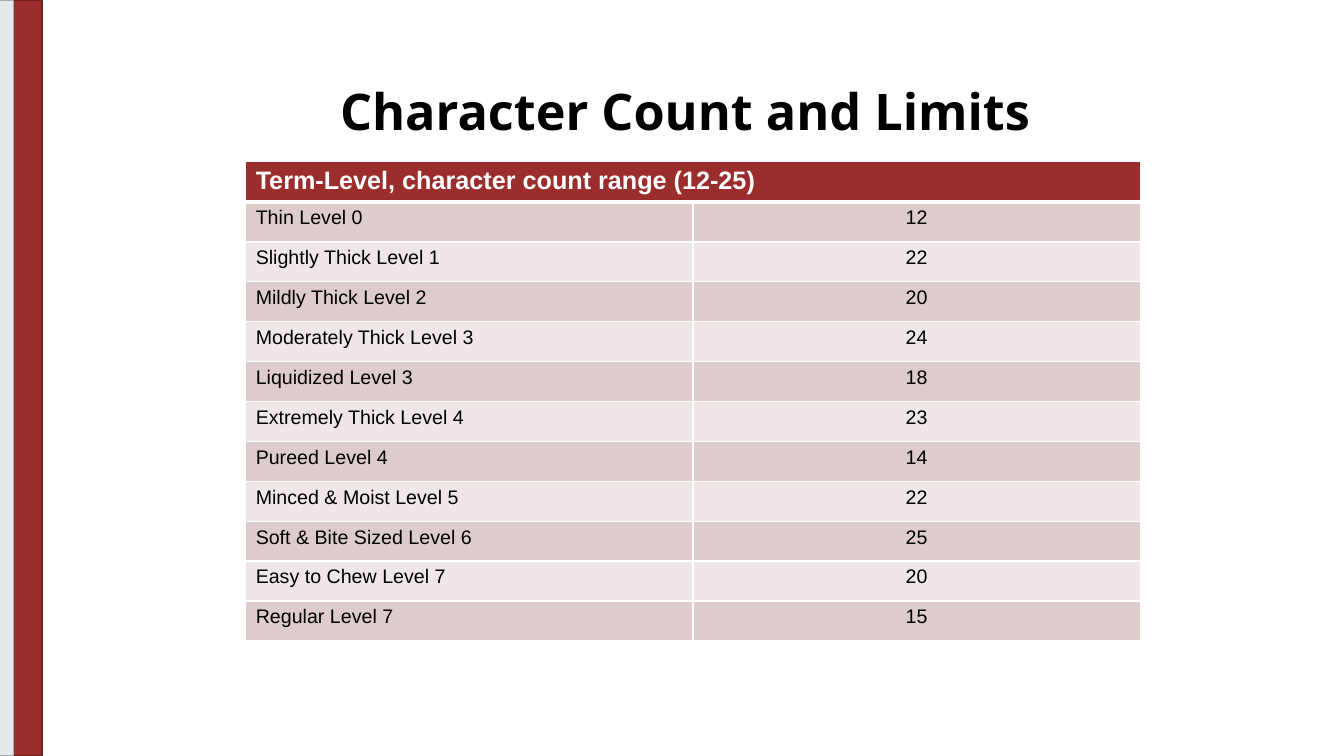
from lxml.etree import SubElement
from pptx import Presentation
from pptx.dml.color import RGBColor
from pptx.enum.shapes import MSO_SHAPE as Preset
from pptx.enum.text import MSO_ANCHOR as Anchor, PP_ALIGN as Align
from pptx.oxml.ns import qn
from pptx.util import Pt

PX = 9525
WIDTH, HEIGHT = 1280, 720
RED, WHITE, BLACK = "9B2D2D", "FFFFFF", "000000"
BANDS = ("DECCCC", "EFE7E7")
HEADING = "Term-Level, character count range (12-25)"
LEVELS = [
    ("Thin Level 0", 12),
    ("Slightly Thick Level 1", 22),
    ("Mildly Thick Level 2", 20),
    ("Moderately Thick Level 3", 24),
    ("Liquidized Level 3", 18),
    ("Extremely Thick Level 4", 23),
    ("Pureed Level 4", 14),
    ("Minced & Moist Level 5", 22),
    ("Soft & Bite Sized Level 6", 25),
    ("Easy to Chew Level 7", 20),
    ("Regular Level 7", 15),
]
TITLE_FONT = {"name": "Open Sans", "size": Pt(36), "bold": True}
HEADING_FONT = {"name": "Arial", "size": Pt(18), "bold": True}
LEVEL_FONT = {"name": "Arial", "size": Pt(14), "bold": False}


def emu(*lengths):
    """Turn px lengths into EMU."""
    return [length * PX for length in lengths]


def paint(color_format, color):
    """Set a fill or font colour from a hex string."""
    color_format.rgb = RGBColor.from_string(color)


def write(frame, text, font_values, color, align):
    """Put one formatted line of text in a frame."""
    paragraph = frame.paragraphs[0]
    paragraph.alignment = align
    run = paragraph.add_run()
    run.text = text
    for key, value in font_values.items():
        setattr(run.font, key, value)
    paint(run.font.color, color)
    return paragraph


def add_stripe(slide, box, color, edge):
    """Draw one vertical stripe of the left margin."""
    stripe = slide.shapes.add_shape(Preset.RECTANGLE, *emu(*box))
    stripe.shadow.inherit = False
    stripe.fill.solid()
    paint(stripe.fill.fore_color, color)
    paint(stripe.line.color, edge)
    stripe.line.width = Pt(1)


def add_title(slide, box, text):
    """Place the centred slide title in its box."""
    frame = slide.shapes.add_textbox(*emu(*box)).text_frame
    frame.word_wrap = True
    frame.vertical_anchor = Anchor.MIDDLE
    write(frame, text, TITLE_FONT, BLACK, Align.CENTER).line_spacing = 0.9


def style_cell(cell, color, top, bottom):
    """Give a cell its white borders and its fill."""
    properties = cell._tc.get_or_add_tcPr()
    for side, points in (("L", 1), ("R", 1), ("T", top), ("B", bottom)):
        border = SubElement(properties, qn(f"a:ln{side}"), w=str(Pt(points)))
        solid = SubElement(border, qn("a:solidFill"))
        SubElement(solid, qn("a:srgbClr"), val=WHITE)
    cell.fill.solid()
    paint(cell.fill.fore_color, color)


def add_level_table(slide, box):
    """Fill the box with the heading and the banded level rows."""
    row_count = len(LEVELS) + 1
    table = slide.shapes.add_table(row_count, 2, *emu(*box)).table
    for column in table.columns:
        column.width = box[2] * PX // 2
    for row in table.rows:
        row.height = box[3] * PX // row_count

    heading = table.cell(0, 0)
    heading.merge(table.cell(0, 1))
    for cell in table.rows[0].cells:
        style_cell(cell, RED, 1, 3)
    write(heading.text_frame, HEADING, HEADING_FONT, WHITE, Align.LEFT)

    for index, level in enumerate(LEVELS):
        aligns = (Align.LEFT, Align.CENTER)
        cells = table.rows[index + 1].cells
        for cell, value, align in zip(cells, level, aligns):
            style_cell(cell, BANDS[index % 2], 1 if index else 3, 1)
            write(cell.text_frame, str(value), LEVEL_FONT, BLACK, align)


def main():
    """Build and save the slide."""
    deck = Presentation()
    deck.slide_width, deck.slide_height = emu(WIDTH, HEIGHT)
    slide = deck.slides.add_slide(deck.slide_layouts[6])
    add_stripe(slide, (0, 0, 40, HEIGHT), RED, "712020")
    add_stripe(slide, (-3, 0, 16, HEIGHT), "E5E9EC", "A7AAAC")
    add_title(slide, (67, 39, 1171, 139), "Character Count and Limits")
    add_level_table(slide, (234, 154, 852, 456))
    deck.save("out.pptx")


if __name__ == "__main__":
    main()
